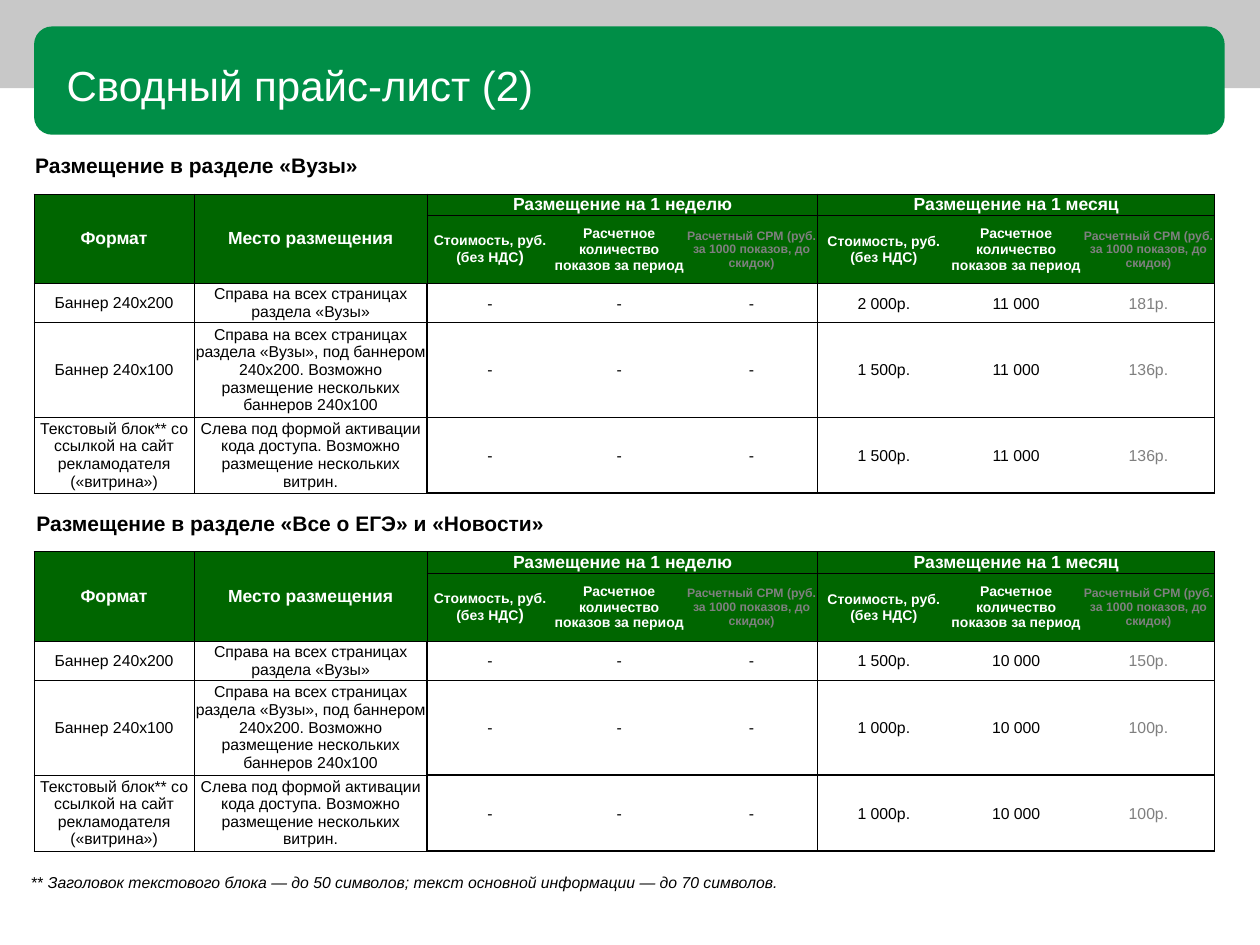
from pptx import Presentation
from pptx.dml.color import RGBColor
from pptx.enum.shapes import MSO_SHAPE
from pptx.enum.text import MSO_ANCHOR, PP_ALIGN
from pptx.oxml.ns import qn
from pptx.util import Inches, Pt
from lxml import etree

RECTANGLE = MSO_SHAPE.RECTANGLE
ROUNDED = MSO_SHAPE.ROUNDED_RECTANGLE
MIDDLE, TOP = MSO_ANCHOR.MIDDLE, MSO_ANCHOR.TOP
CENTER = PP_ALIGN.CENTER

WHITE = RGBColor(0xFF, 0xFF, 0xFF)
BLACK = RGBColor(0, 0, 0)
BAND_GRAY = RGBColor(0xC8, 0xC8, 0xC8)
TITLE_GREEN = RGBColor(0, 0x8E, 0x47)
HEADER_GREEN = RGBColor(0, 0x66, 0)
MUTED = RGBColor(0x7F, 0x7F, 0x7F)

# Border widths in points
THIN, THICK = 0.5, 1
BOX = dict(L=THIN, R=THIN, T=THIN, B=THIN)

COLUMNS = [1.27, 1.85, 1] + [1.05] * 5
ROWS = [0.17, 0.54, 0.31, 0.75, 0.6]
WEEK, MONTH = 2, 5
TOP_HEADERS = {0: "Формат", 1: "Место размещения",
               WEEK: "Размещение на 1 неделю", MONTH: "Размещение на 1 месяц"}
METRICS = [
    ("Стоимость, руб. (без НДС)", 8, WHITE),
    ("Расчетное количество показов за период", 8, WHITE),
    ("Расчетный CPM (руб. за 1000 показов, до скидок)", 7, MUTED),
]
FORMATS = [
    ("Баннер 240х200", "Справа на всех страницах раздела «Вузы»"),
    ("Баннер 240х100", "Справа на всех страницах раздела «Вузы», под баннером "
     "240х200. Возможно размещение нескольких баннеров 240х100"),
    ("Текстовый блок** со ссылкой на сайт рекламодателя («витрина»)",
     "Слева под формой активации кода доступа. Возможно размещение "
     "нескольких витрин."),
]
UNIVERSITY_PRICES = [("2 000р.", "11 000", "181р."),
                     ("1 500р.", "11 000", "136р."),
                     ("1 500р.", "11 000", "136р.")]
NEWS_PRICES = [("1 500р.", "10 000", "150р."),
               ("1 000р.", "10 000", "100р."),
               ("1 000р.", "10 000", "100р.")]


class PriceSlide:
    font_name = "Arial"

    def __init__(self, presentation):
        self.slide = presentation.slides.add_slide(presentation.slide_layouts[6])

    def style(self, paragraph, size, color, bold=False):
        font = paragraph.font
        font.name, font.size, font.bold = self.font_name, Pt(size), bold
        font.color.rgb = color

    def panel(self, kind, left, top, width, height, color):
        shape = self.slide.shapes.add_shape(
            kind, Inches(left), Inches(top), Inches(width), Inches(height))
        shape.shadow.inherit = False
        shape.fill.solid()
        shape.fill.fore_color.rgb = color
        shape.line.fill.background()

    def text(self, content, left, top, width, height, size, color=BLACK,
             bold=False, wrap=False, anchor=TOP):
        box = self.slide.shapes.add_textbox(
            Inches(left), Inches(top), Inches(width), Inches(height))
        frame = box.text_frame
        frame.word_wrap = wrap
        frame.vertical_anchor = anchor
        paragraph = frame.paragraphs[0]
        paragraph.text = content
        self.style(paragraph, size, color, bold)
        return paragraph

    def borders(self, cell, widths):
        properties = cell._tc.get_or_add_tcPr()
        for side in "LRTB":
            line = etree.SubElement(properties, qn(f"a:ln{side}"))
            if side in widths:
                line.set("w", str(Pt(widths[side])))
                fill = etree.SubElement(line, qn("a:solidFill"))
                etree.SubElement(fill, qn("a:srgbClr"), val=str(BLACK))
            else:
                line.set("w", "0")
                etree.SubElement(line, qn("a:noFill"))

    def cell(self, cell, content, size, color, widths, fill=None, inset=0):
        cell.margin_left = cell.margin_right = cell.margin_top = Inches(inset)
        cell.margin_bottom = 0
        cell.vertical_anchor = MIDDLE
        self.borders(cell, widths)
        if fill is None:
            cell.fill.background()
        else:
            cell.fill.solid()
            cell.fill.fore_color.rgb = fill
        paragraph = cell.text_frame.paragraphs[0]
        paragraph.text = content
        paragraph.alignment = CENTER
        self.style(paragraph, size, color, bold=fill is not None)

    def price_table(self, left, top, prices):
        table = self.slide.shapes.add_table(
            len(ROWS), len(COLUMNS), Inches(left), Inches(top),
            Inches(sum(COLUMNS)), Inches(sum(ROWS))).table
        table.first_row = table.horz_banding = False
        for column, width in zip(table.columns, COLUMNS):
            column.width = Inches(width)
        for row, height in zip(table.rows, ROWS):
            row.height = Inches(height)

        # Header rows
        for column in range(len(COLUMNS)):
            self.cell(table.cell(0, column), TOP_HEADERS.get(column, ""),
                      10, WHITE, BOX, HEADER_GREEN)
            if column < WEEK:
                self.cell(table.cell(1, column), "", 10, WHITE, BOX, HEADER_GREEN)
                table.cell(0, column).merge(table.cell(1, column))
        for start in (WEEK, MONTH):
            table.cell(0, start).merge(table.cell(0, start + 2))
            for offset, (label, size, color) in enumerate(METRICS):
                widths = dict(T=THIN, B=THICK)
                if offset == 0:
                    widths["L"] = THIN
                if offset == 2:
                    widths["R"] = THIN
                self.cell(table.cell(1, start + offset), label, size, color,
                          widths, HEADER_GREEN)
        # The closing bracket of the weekly price is a size larger
        paragraph = table.cell(1, WEEK).text_frame.paragraphs[0]
        paragraph.runs[0].text = METRICS[0][0][:-1]
        bracket = paragraph.add_run()
        bracket.text = ")"
        bracket.font.size = Pt(9)

        # Formats and prices
        for row, (names, values) in enumerate(zip(FORMATS, prices), 2):
            self.cell(table.cell(row, 0), names[0], 9, BLACK, BOX)
            self.cell(table.cell(row, 1), names[1], 9, BLACK, {**BOX, "R": THICK})
            for column, value in enumerate(("-",) * 3 + values, WEEK):
                widths = dict(T=THICK, B=THICK)
                if column in (WEEK, MONTH):
                    widths["L"] = THICK if column == WEEK else THIN
                if column in (MONTH - 1, MONTH + 2):
                    widths["R"] = THIN if column < MONTH else THICK
                color = MUTED if column == MONTH + 2 else BLACK
                self.cell(table.cell(row, column), value, 9, color, widths,
                          inset=0.01)


def main():
    presentation = Presentation()
    presentation.slide_width, presentation.slide_height = Inches(10), Inches(7.5)
    page = PriceSlide(presentation)

    # Title
    page.panel(RECTANGLE, 0, 0, 10, 0.7, BAND_GRAY)
    page.panel(ROUNDED, 0.27, 0.21, 9.45, 0.86, TITLE_GREEN)
    title = page.text("Сводный прайс-лист (2)", 0.43, 0.46, 6.02, 0.48, 24,
                      WHITE, wrap=True, anchor=MIDDLE)
    title.line_spacing = 0.88

    # Price sections
    page.text("Размещение в разделе «Вузы»", 0.18, 1.16, 2.79, 0.3, 12, bold=True)
    page.price_table(0.27, 1.54, UNIVERSITY_PRICES)
    page.text("Размещение в разделе «Все о ЕГЭ» и «Новости»",
              0.19, 4, 4.28, 0.3, 12, bold=True)
    page.price_table(0.27, 4.38, NEWS_PRICES)

    # Footnote
    footnote = page.text("** ", 0.15, 6.88, 6.23, 0.25, 9)
    note = footnote.add_run()
    note.text = ("Заголовок текстового блока — до 50 символов; "
                 "текст основной информации — до 70 символов.")
    note.font.italic = True

    presentation.save("out.pptx")


if __name__ == "__main__":
    main()
